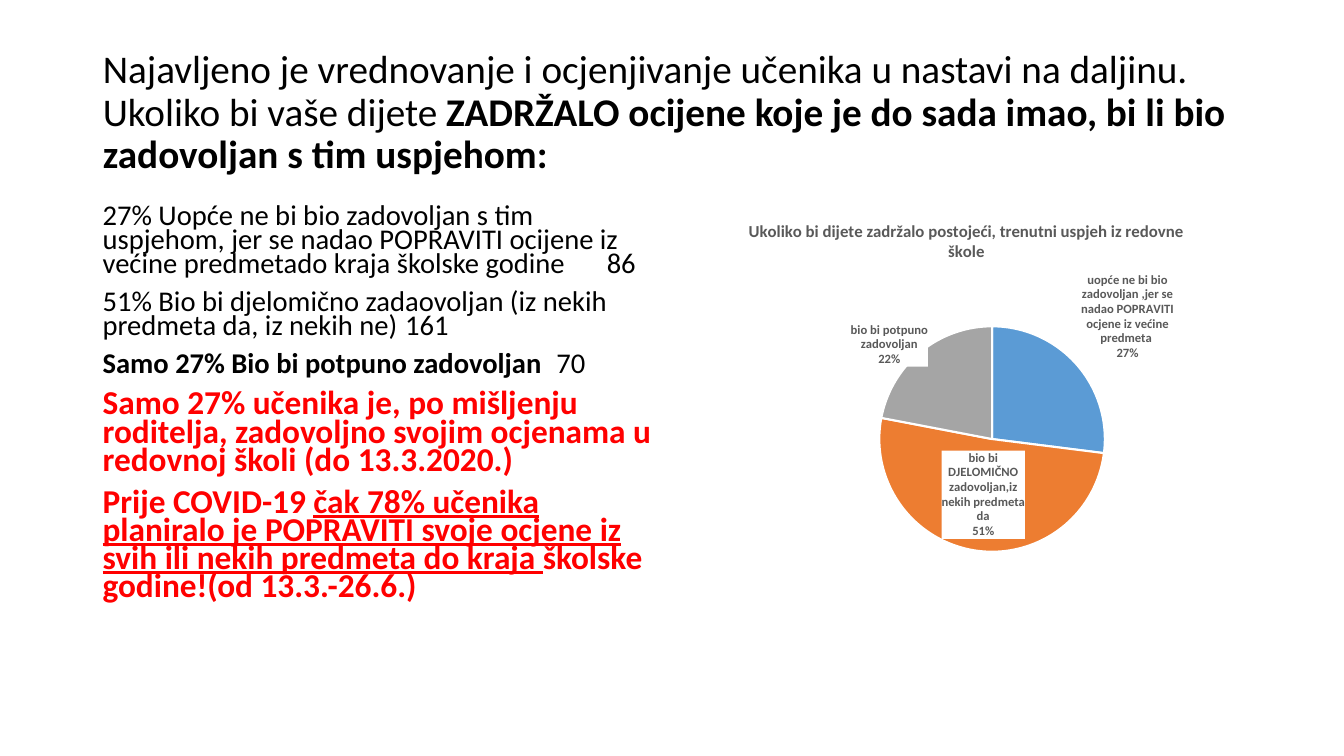
from lxml import etree
from pptx import Presentation
from pptx import util as u
from pptx.chart.data import CategoryChartData
from pptx.dml.color import RGBColor
from pptx.enum import chart as ch, text
from pptx.oxml import parse_xml
from pptx.oxml.ns import nsdecls, qn

COLORS = {"ink": "000000", "alert": "FF0000", "label": "595959", "white": "FFFFFF",
          "blue": "5B9BD5", "orange": "ED7D31", "gray": "A5A5A5"}
FONT = "Calibri"


def style(font, size, color, bold=False):
    font.name = FONT
    font.size = u.Pt(size)
    font.bold = bold
    font.color.rgb = RGBColor.from_string(COLORS[color])


def add_run(p, words, size, color="ink", bold=False, underline=False):
    r = p.add_run()
    r.text = words
    style(r.font, size, color, bold)
    r.font.underline = underline


prs = Presentation()
prs.slide_width, prs.slide_height = u.Inches(13.33), u.Inches(7.5)
s = prs.slides.add_slide(prs.slide_layouts[5])

title = s.shapes.title
title.left, title.top = u.Inches(0.92), u.Inches(0.4)
title.width, title.height = u.Inches(11.5), u.Inches(1.45)
tf = title.text_frame
tf.vertical_anchor = text.MSO_ANCHOR.MIDDLE
tf.auto_size = text.MSO_AUTO_SIZE.NONE
p = tf.paragraphs[0]
p.alignment = text.PP_ALIGN.LEFT
p.line_spacing = 0.9
add_run(p, "Najavljeno je vrednovanje i ocjenjivanje učenika u nastavi na daljinu. "
           "Ukoliko bi vaše dijete ", 28)
add_run(p, "ZADRŽALO ocijene koje je do sada imao, bi li bio zadovoljan s tim uspjehom:",
        28, bold=True)

answers = [
    [("27% Uopće ne bi bio zadovoljan s tim uspjehom, jer se nadao POPRAVITI ocijene iz "
      "većine predmetado kraja školske godine\t86", 20.4)],
    [("51% Bio bi djelomično zadaovoljan (iz nekih predmeta da, iz nekih ne)\t161", 20.4)],
    [("Samo 27% Bio bi potpuno zadovoljan", 20.4, "ink", True), ("\t70", 20.4)],
    [("Samo 27% učenika je, po mišljenju roditelja, zadovoljno svojim ocjenama u "
      "redovnoj školi (do 13.3.2020.)", 23.8, "alert", True)],
    [("Prije COVID-19 ", 23.8, "alert", True),
     ("čak 78% učenika planiralo je POPRAVITI svoje ocjene iz svih ili nekih predmeta "
      "do kraja ", 23.8, "alert", True, True),
     ("školske godine!(od 13.3.-26.6.)", 23.8, "alert", True)],
]
body = s.shapes.add_textbox(u.Inches(0.92), u.Inches(2), u.Inches(5.67), u.Inches(4.76))
tf = body.text_frame
tf.word_wrap = True
for i, runs in enumerate(answers):
    p = tf.add_paragraph() if i else tf.paragraphs[0]
    p.line_spacing = 0.7
    p.space_before = u.Pt(10)
    for run in runs:
        add_run(p, *run)

data = CategoryChartData()
data.categories = ["uopće ne bi bio zadovoljan ,jer se nadao POPRAVITI ocjene iz većine predmeta ",
                   "bio bi DJELOMIČNO zadovoljan,iz nekih predmeta da",
                   "bio bi potpuno zadovoljan"]
data.add_series("Series 1", [27, 51, 22])
chart = s.shapes.add_chart(ch.XL_CHART_TYPE.PIE, u.Inches(6.75), u.Inches(2),
                           u.Inches(5.67), u.Inches(4.76), data).chart
chart.has_legend = False
chart.font.name = FONT
chart.font.size = u.Pt(10)
chart.has_title = True
chart.chart_title.include_in_layout = False
add_run(chart.chart_title.text_frame.paragraphs[0],
        "Ukoliko bi dijete zadržalo postojeći, trenutni uspjeh iz redovne škole",
        12, "label", True)

plot_area = chart.plots[0]._element.getparent()
for old in plot_area.findall(qn("c:layout")):
    plot_area.remove(old)
plot_area.insert(0, parse_xml(
    f'<c:layout {nsdecls("c")}><c:manualLayout><c:layoutTarget val="inner"/>'
    '<c:xMode val="edge"/><c:yMode val="edge"/><c:x val="0.09"/><c:y val="0.26"/>'
    '<c:w val="0.91"/><c:h val="0.47"/></c:manualLayout></c:layout>'))

pos = ch.XL_LABEL_POSITION
slices = [("blue", pos.OUTSIDE_END, None), ("orange", pos.CENTER, None),
          ("gray", pos.OUTSIDE_END, (0.02, 0.04))]
chart.plots[0].vary_by_categories = True
for i, (color, place, shift) in enumerate(slices):
    point = chart.plots[0].series[0].points[i]
    point.format.fill.solid()
    point.format.fill.fore_color.rgb = RGBColor.from_string(COLORS[color])
    point.format.line.color.rgb = RGBColor.from_string(COLORS["white"])
    point.format.line.width = u.Pt(1.5)
    label = point.data_label
    style(label.font, 9, "label", True)
    label.position = place
    d = chart.plots[0].series[0]._element.find(qn("c:dLbls")).findall(qn("c:dLbl"))[i]
    for tag, val in (("showVal", "0"), ("showCatName", "1"), ("showPercent", "1")):
        d.find(qn("c:" + tag)).set("val", val)
    for old in d.findall(qn("c:spPr")):
        d.remove(old)
    d.find(qn("c:txPr")).addprevious(parse_xml(
        f'<c:spPr {nsdecls("c", "a")}><a:solidFill><a:srgbClr val="{COLORS["white"]}"/>'
        '</a:solidFill></c:spPr>'))
    etree.SubElement(d, qn("c:separator")).text = "\n"
    if shift:
        d.find(qn("c:idx")).addnext(parse_xml(
            f'<c:layout {nsdecls("c")}><c:manualLayout><c:x val="{shift[0]}"/>'
            f'<c:y val="{shift[1]}"/></c:manualLayout></c:layout>'))

prs.save("out.pptx")
